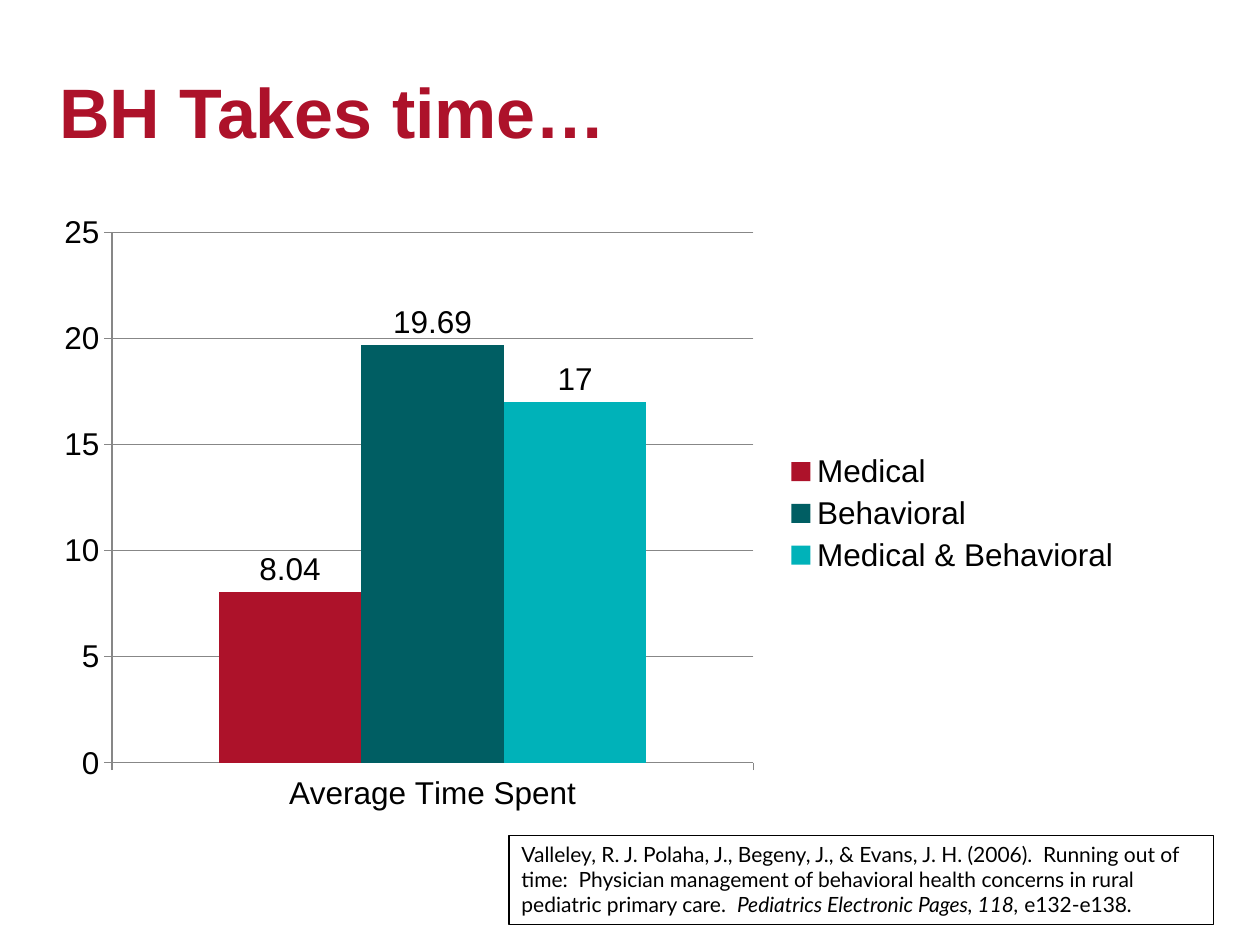
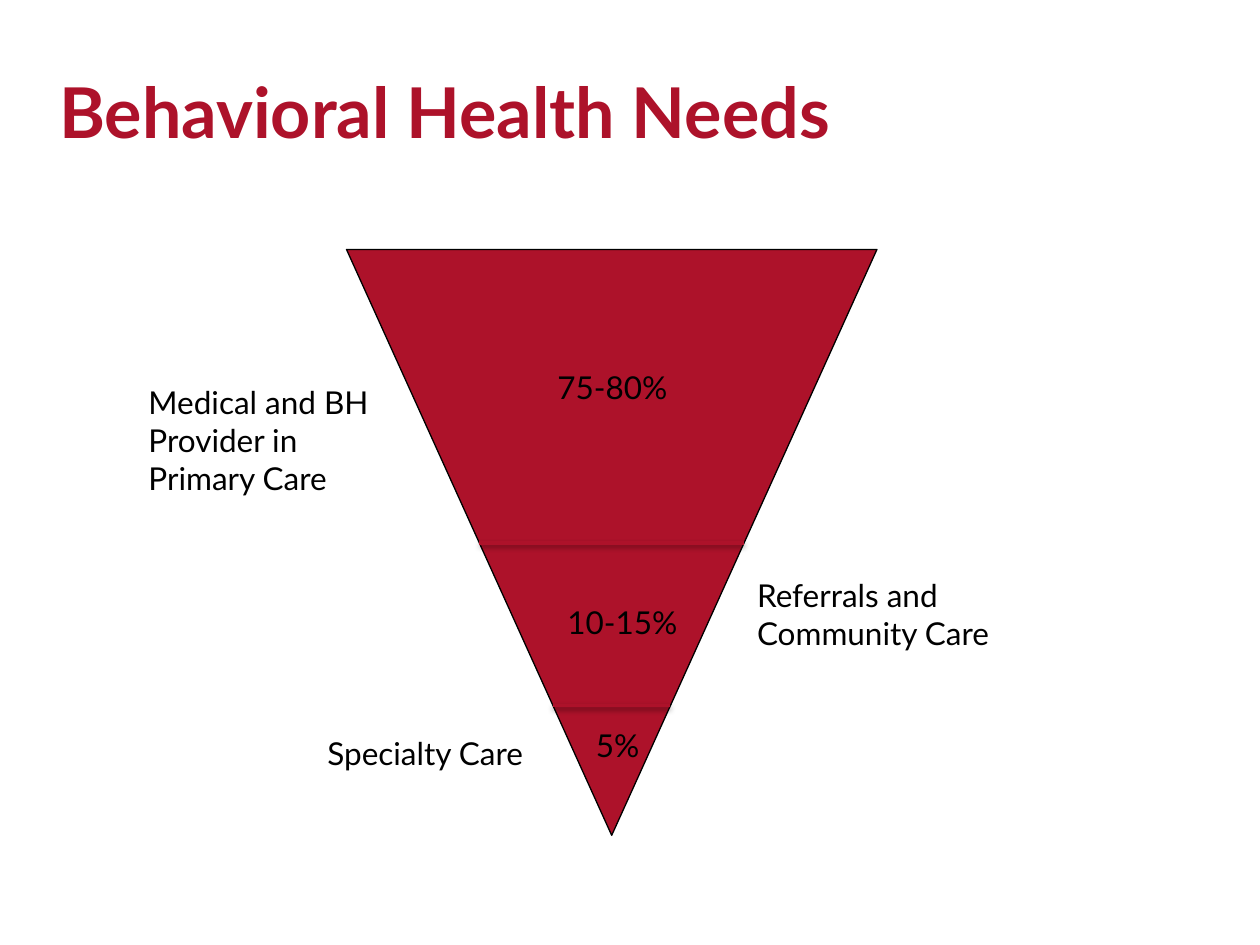
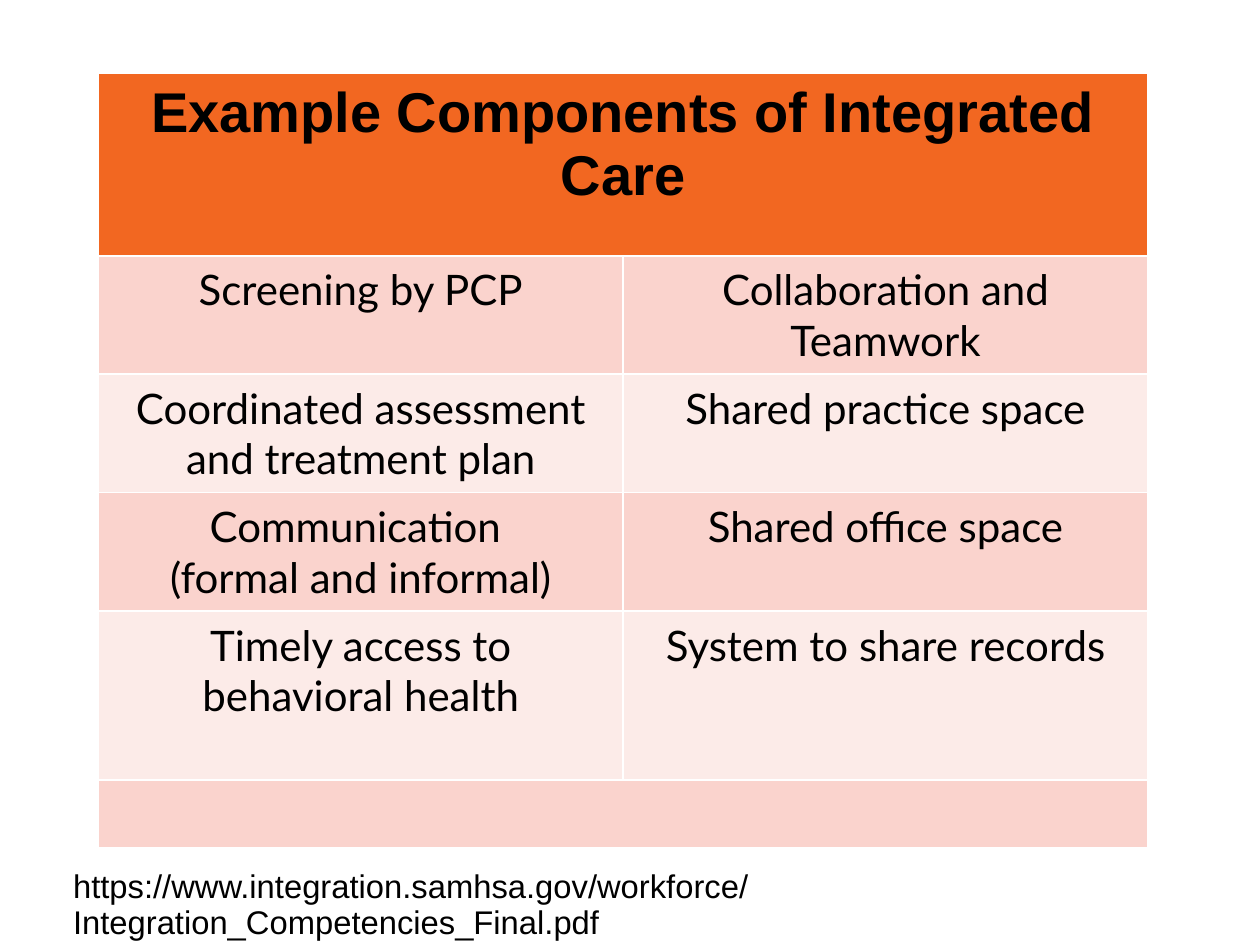
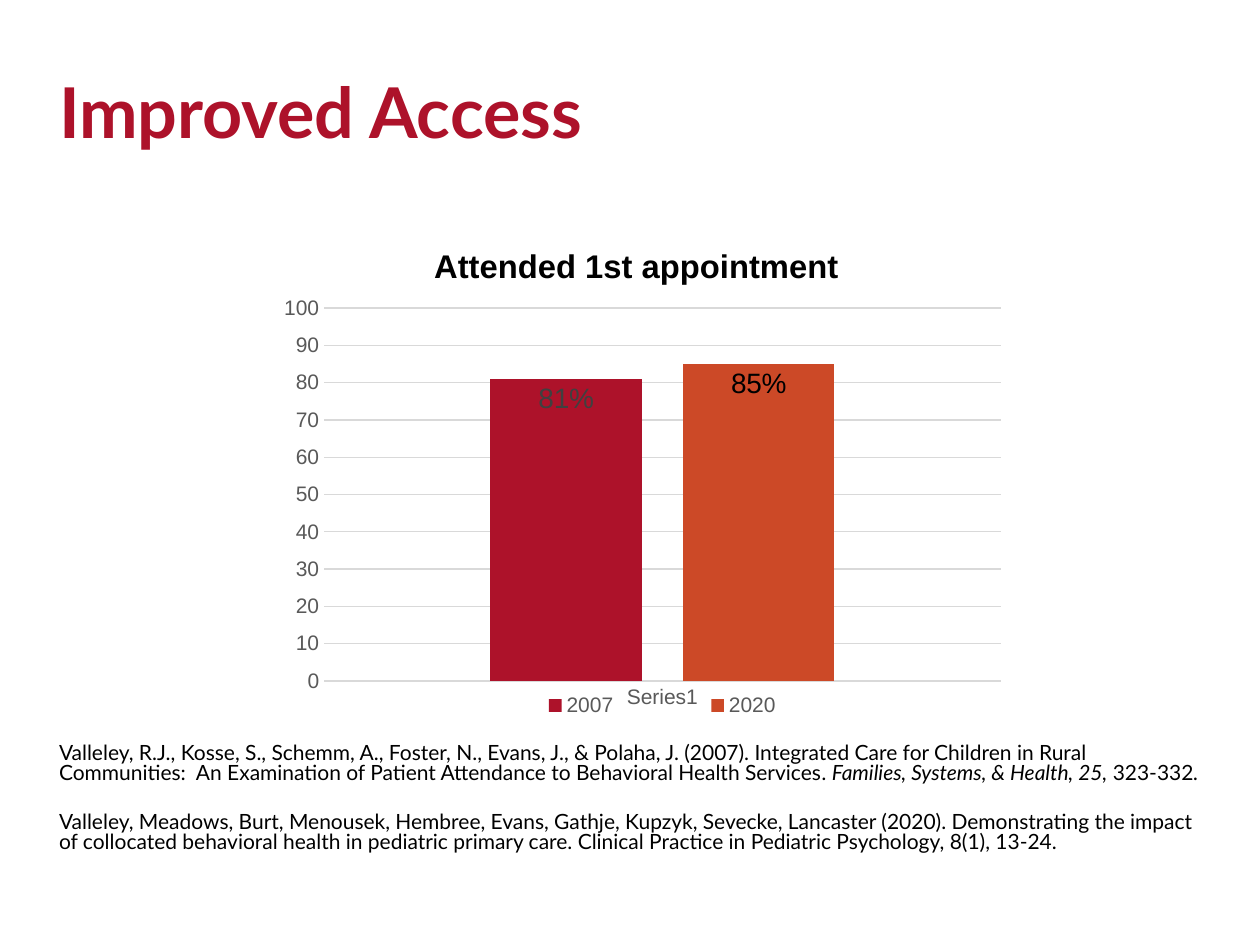
from pptx import Presentation
from pptx.chart.data import CategoryChartData as ChartData
from pptx.dml.color import RGBColor
from pptx.enum.chart import XL_CHART_TYPE as Kind, XL_LABEL_POSITION as Spot
from pptx.enum.chart import XL_LEGEND_POSITION as Side, XL_TICK_MARK as Tick
from pptx.enum.shapes import MSO_CONNECTOR as Wire, MSO_SHAPE as Form
from pptx.enum.text import MSO_ANCHOR as Anchor, MSO_AUTO_SIZE as Fit, PP_ALIGN as Align
from pptx.oxml import parse_xml
from pptx.oxml.ns import nsdecls, qn
from pptx.util import Inches, Pt

# Page grid: 100 columns by 75 rows
WIDE, HIGH = Inches(10), Inches(7.5)
COL, ROW = WIDE / 100, HIGH / 75

# Palette and fonts
RED = RGBColor(0xAD, 0x12, 0x2A)
TEAL = RGBColor(0x00, 0x5E, 0x63)
AQUA = RGBColor(0x00, 0xB2, 0xB9)
RUST = RGBColor(0xCC, 0x49, 0x27)
ORANGE = RGBColor(0xF2, 0x67, 0x21)
ROSE = RGBColor(0xFA, 0xD3, 0xCD)
BLUSH = RGBColor(0xFC, 0xEB, 0xE8)
BLACK = RGBColor(0, 0, 0)
COAL = RGBColor(0x40, 0x40, 0x40)
SLATE = RGBColor(0x59, 0x59, 0x59)
GRAY = RGBColor(0x87, 0x87, 0x87)
PALE = RGBColor(0xD9, 0xD9, 0xD9)
SANS, BODY = "Arial", "Lato"
TITLE_ONLY, BLANK = 5, 6


def area(x, y, w, h):
    """Turn grid units into a left, top, width, height tuple."""
    return round(x * COL), round(y * ROW), round(w * COL), round(h * ROW)


# Text
def style(font, size, color=BLACK, name=BODY, bold=False, italic=False):
    font.name, font.size = name, Pt(size)
    font.bold, font.italic = bold, italic
    font.color.rgb = color


def write(frame, paras, size, align=Align.LEFT, lead=None, gap=0, **look):
    """Each paragraph is a string or a list of (text, italic) runs."""
    for i, para in enumerate(paras):
        line = frame.paragraphs[0] if i == 0 else frame.add_paragraph()
        line.alignment = align
        if lead:
            line.line_spacing = lead
        line.space_before = Pt(gap if i else 0)
        for text, italic in [(para, False)] if isinstance(para, str) else para:
            run = line.add_run()
            run.text = text
            style(run.font, size, italic=italic, **look)


def pad(item, side, top):
    item.margin_left = item.margin_right = Inches(side)
    item.margin_top = item.margin_bottom = Inches(top)


def add_text(slide, at, paras, size=18, **look):
    box = slide.shapes.add_textbox(*area(*at))
    box.text_frame.word_wrap = True
    write(box.text_frame, paras, size, **look)
    box.text_frame.auto_size = Fit.SHAPE_TO_FIT_TEXT
    return box


def add_slide(deck, title, name=BODY):
    slide = deck.slides.add_slide(deck.slide_layouts[TITLE_ONLY])
    head = slide.shapes.title
    head.left, head.top, head.width, head.height = area(3.7, 2.5, 86.3, 13.4)
    frame = head.text_frame
    frame.word_wrap, frame.vertical_anchor = True, Anchor.MIDDLE
    frame.auto_size = Fit.NONE
    pad(frame, 0.1, 0)
    write(frame, [title], 40, lead=0.9, color=RED, name=name, bold=True)
    return slide


# Charts
def place(node, index, inner=False, **spots):
    """Give a chart part a manual layout, in shares of the chart."""
    old = node.find(qn("c:layout"))
    if old is not None:
        node.remove(old)
    parts = '<c:layoutTarget val="inner"/>' if inner else ""
    parts += '<c:xMode val="edge"/><c:yMode val="edge"/>'
    parts += "".join(f'<c:{key} val="{val}"/>' for key, val in spots.items())
    node.insert(index, parse_xml(
        f'<c:layout {nsdecls("c")}><c:manualLayout>{parts}</c:manualLayout></c:layout>'))


def add_bars(slide, at, cat, bars, gap, lap, size, color, rule, top, step, side):
    """Draw one group of columns; bars are (name, value, color)."""
    data = ChartData()
    data.categories = [cat]
    for name, value, _ in bars:
        data.add_series(name, [value])
    chart = slide.shapes.add_chart(Kind.COLUMN_CLUSTERED, *area(*at), data).chart
    chart.has_title = False
    style(chart.font, size, color, SANS)
    chart.has_legend = True
    chart.legend.position = side
    chart.legend.include_in_layout = False
    style(chart.legend.font, size, color, SANS)
    plot = chart.plots[0]
    plot.gap_width, plot.overlap, plot.vary_by_categories = gap, lap, False
    for series, (_, _, fill) in zip(plot.series, bars):
        series.format.fill.solid()
        series.format.fill.fore_color.rgb = fill
    scale = chart.value_axis
    scale.minimum_scale, scale.maximum_scale, scale.major_unit = 0, top, step
    scale.has_major_gridlines = True
    for axis in (scale, chart.category_axis):
        style(axis.tick_labels.font, size, color, SANS)
    for item in (scale.major_gridlines, scale, chart.category_axis):
        item.format.line.color.rgb = rule
        item.format.line.width = Pt(0.75)
    return chart


# Diagram
def add_cut(slide, left, right, y):
    """Draw a divider with a soft shadow below it."""
    line = slide.shapes.add_connector(
        Wire.STRAIGHT, *(round(n) for n in (left * COL, y * ROW, right * COL, y * ROW)))
    line.line.color.rgb, line.line.width = RED, Pt(2)
    line._element.spPr.append(parse_xml(
        f'<a:effectLst {nsdecls("a")}>'
        f'<a:outerShdw blurRad="{Pt(3.1)}" dist="{Pt(1.6)}" dir="5400000" rotWithShape="0">'
        '<a:srgbClr val="000000"><a:alpha val="38000"/></a:srgbClr>'
        '</a:outerShdw></a:effectLst>'))


# Table
def edge(cell):
    for i, side in enumerate("LRTB"):
        cell._tc.get_or_add_tcPr().insert(i, parse_xml(
            f'<a:ln{side} {nsdecls("a")} w="{Pt(1)}"><a:solidFill>'
            f'<a:srgbClr val="FFFFFF"/></a:solidFill></a:ln{side}>'))


def add_grid(slide, at, head, rows, tall):
    """Header and closing row span both columns; rows between are banded."""
    count = len(tall)
    table = slide.shapes.add_table(count, 2, *area(*at)).table
    for row, units in zip(table.rows, tall):
        row.height = round(units * ROW)
    for r in range(count):
        for c in range(2):
            cell = table.cell(r, c)
            cell.fill.solid()
            cell.fill.fore_color.rgb = ORANGE if r == 0 else ROSE if r % 2 else BLUSH
            edge(cell)
            pad(cell, 0.13, 0.07)
            if 0 < r < count - 1:
                write(cell.text_frame, rows[r - 1][c], 24, Align.CENTER)
    for r in (0, count - 1):
        table.cell(r, 0).merge(table.cell(r, 1))
    write(table.cell(0, 0).text_frame, [head], 32, Align.CENTER, name=SANS, bold=True)


# Slides
def time_slide(deck):
    slide = add_slide(deck, "BH Takes time…", SANS)
    bars = [("Medical", 8.04, RED), ("Behavioral", 19.69, TEAL),
            ("Medical & Behavioral", 17, AQUA)]
    chart = add_bars(slide, (3.7, 16, 86.3, 49.5), "Average Time Spent", bars,
                     150, 0, 18, BLACK, GRAY, 25, 5, Side.RIGHT)
    plot = chart.plots[0]
    plot.has_data_labels = True
    plot.data_labels.show_value = True
    plot.data_labels.position = Spot.OUTSIDE_END
    style(plot.data_labels.font, 18, name=SANS)
    place(chart._chartSpace.chart.plotArea, 0, True, x=0.06, y=0.05, w=0.59, h=0.85)

    note = slide.shapes.add_shape(Form.RECTANGLE, *area(40.4, 66.3, 55.9, 7.1))
    note.shadow.inherit = False
    note.fill.background()
    note.line.color.rgb, note.line.width = BLACK, Pt(0.75)
    frame = note.text_frame
    frame.word_wrap, frame.vertical_anchor = True, Anchor.TOP
    write(frame, [[
        ("Valleley, R. J. Polaha, J., Begeny, J., & Evans, J. H. (2006).  Running out of "
         "time:  Physician management of behavioral health concerns in rural pediatric "
         "primary care.  ", False),
        ("Pediatrics Electronic Pages, 118, ", True), ("e132-e138", False), (".", True)]], 12)
    frame.auto_size = Fit.SHAPE_TO_FIT_TEXT


def needs_slide(deck):
    slide = add_slide(deck, "Behavioral Health Needs")
    left, top, wide, tall = 27.5, 19.8, 42.1, 46.5
    cone = slide.shapes.add_shape(Form.FLOWCHART_MERGE, *area(left, top, wide, tall))
    cone.shadow.inherit = False
    cone.fill.solid()
    cone.fill.fore_color.rgb = RED
    cone.line.color.rgb, cone.line.width = BLACK, Pt(0.75)
    # Dividers reach the slanted sides
    mid = left + wide / 2
    for y in (56, 43.1):
        half = wide / 2 * (top + tall - y) / tall
        add_cut(slide, mid - half, mid + half, y)
    for at, text, align in [
            ((38.9, 28.7, 19.4, 4), "75-80%", Align.CENTER),
            ((39.7, 47.4, 19.4, 4), "10-15%", Align.CENTER),
            ((46.3, 57.1, 6.2, 4), "5%", Align.LEFT),
            ((10.8, 29.9, 21.2, 10.1), "Medical and BH Provider in Primary Care", Align.LEFT),
            ((59.1, 45.2, 21.2, 7.1), "Referrals and Community Care", Align.LEFT),
            ((25, 57.8, 21.2, 4), "Specialty Care", Align.LEFT)]:
        add_text(slide, at, [text], align=align)


def parts_slide(deck):
    slide = deck.slides.add_slide(deck.slide_layouts[BLANK])
    rows = [
        (["Screening by PCP"], ["Collaboration and Teamwork"]),
        (["Coordinated assessment and treatment plan"], ["Shared practice space"]),
        (["Communication ", "(formal and informal)"], ["Shared office space"]),
        (["Timely access to behavioral health"], ["System to share records"])]
    add_grid(slide, (7.8, 5.8, 83.3, 62.1), "Example Components of Integrated Care",
             rows, [14.5, 9.4, 9.4, 9.4, 13.4, 5.4])
    link = add_text(
        slide, (4.5, 68.4, 90.9, 7),
        ["https://www.integration.samhsa.gov/workforce/Integration_Competencies_Final.pdf"],
        18.7, lead=0.9, name=SANS)
    pad(link.text_frame, 0.13, 0.07)


def access_slide(deck):
    slide = add_slide(deck, "Improved Access")
    add_text(slide, (3.7, 58.6, 92.5, 11), [
        [("Valleley, R.J., Kosse, S., Schemm, A., Foster, N., Evans, J., & Polaha, J. (2007). "
          "Integrated Care for Children in Rural Communities:  An Examination of Patient "
          "Attendance to Behavioral Health Services", False),
         (". Families, Systems, & Health, 25, ", True), ("323-332", False), (".", True)],
        "Valleley, Meadows, Burt, Menousek, Hembree, Evans, Gathje, Kupzyk, Sevecke, "
        "Lancaster (2020). Demonstrating the impact of collocated behavioral health in "
        "pediatric primary care. Clinical Practice in Pediatric Psychology, 8(1), 13-24."],
        12, lead=0.8, gap=16.5)

    bars = [("2007", 81, RED), ("2020", 85, RUST)]
    chart = add_bars(slide, (21.6, 17.6, 59, 42.9), "Series1", bars,
                     219, -27, 12, SLATE, PALE, 100, 10, Side.BOTTOM)
    chart.value_axis.format.line.fill.background()
    for axis in (chart.value_axis, chart.category_axis):
        axis.major_tick_mark = Tick.NONE
    chart.has_title = True
    title = chart.chart_title
    write(title.text_frame, ["Attended 1st appointment"], 18.7, Align.CENTER,
          name=SANS, bold=True)
    place(title._element, 1, x=0.21, y=0.03)
    place(chart._chartSpace.chart.plotArea, 0, True, x=0.07, y=0.16, w=0.91, h=0.69)
    # The wide legend leaves room for the category name between its entries
    place(chart.legend._element, 1, x=0.25, y=0.86, w=0.55, h=0.07)
    # Value labels sit inside the columns
    for series, (_, value, _), ink in zip(chart.plots[0].series, bars, (COAL, BLACK)):
        label = series.points[0].data_label
        write(label.text_frame, [f"{value}%"], 16, Align.CENTER, color=ink, name=SANS)
        label.position = Spot.INSIDE_END


def main():
    deck = Presentation()
    deck.slide_width, deck.slide_height = WIDE, HIGH
    for build in (time_slide, needs_slide, parts_slide, access_slide):
        build(deck)
    deck.save("out.pptx")


if __name__ == "__main__":
    main()
